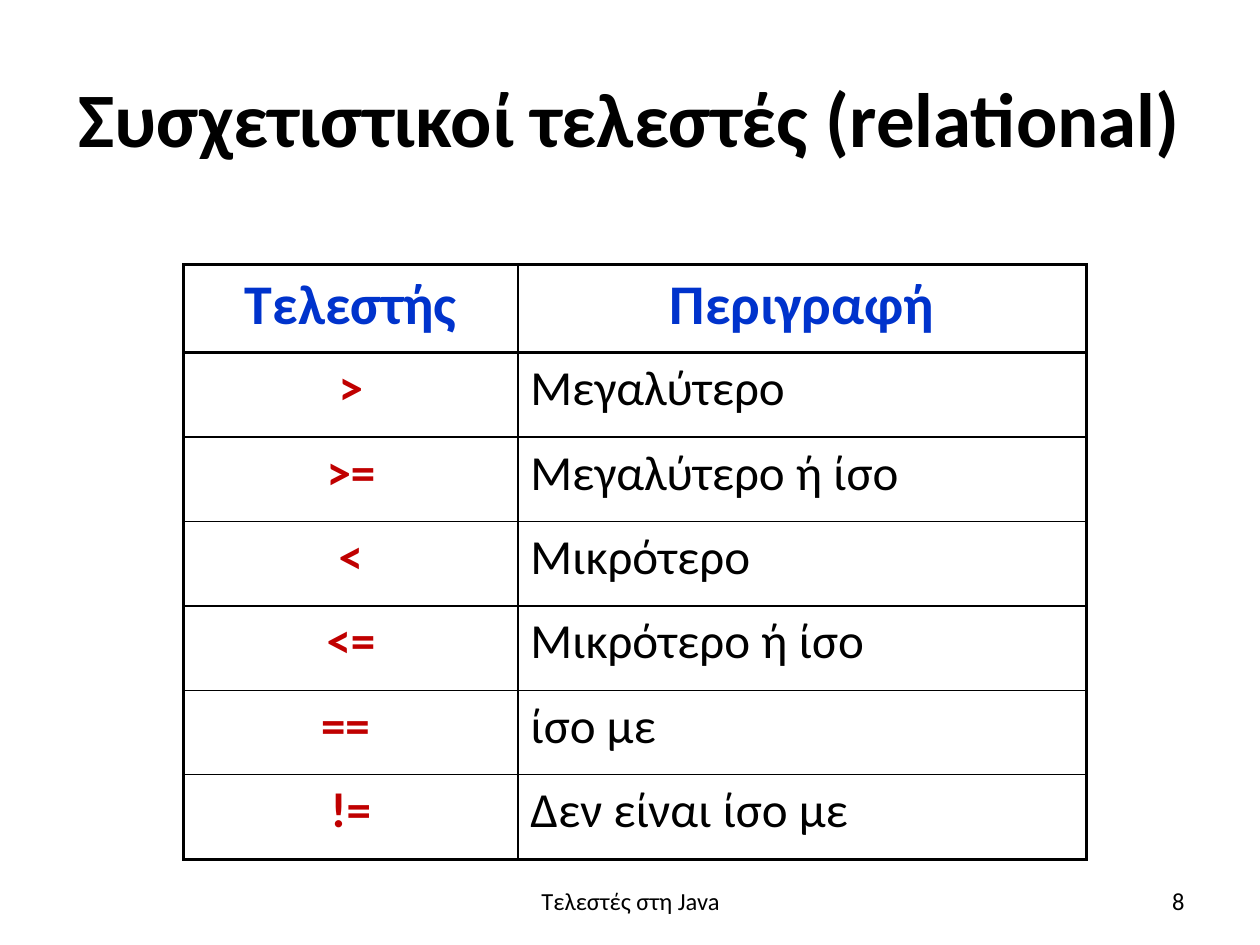
from lxml import etree
from pptx import Presentation
from pptx.dml.color import RGBColor
from pptx.enum.text import MSO_ANCHOR, MSO_AUTO_SIZE, PP_ALIGN
from pptx.oxml.ns import qn
from pptx.util import Inches, Pt

LEFT, CENTER, RIGHT = PP_ALIGN.LEFT, PP_ALIGN.CENTER, PP_ALIGN.RIGHT
MIDDLE = MSO_ANCHOR.MIDDLE
NO_AUTOFIT = MSO_AUTO_SIZE.NONE

FONT = "Calibri"
COLORS = {"text": "000000", "header": "0033CC", "operator": "C00000", "line": "000000"}

HEADERS = ("Τελεστής", "Περιγραφή")
OPERATORS = (
    (">", "Μεγαλύτερο"),
    (">=", "Μεγαλύτερο ή ίσο"),
    ("<", "Μικρότερο"),
    ("<=", "Μικρότερο ή ίσο"),
    ("== ", "ίσο με"),
    ("!=", "Δεν είναι ίσο με"),
)
COLUMN_WIDTHS = (2.65, 4.51)
HEADER_HEIGHT, ROW_HEIGHT = 0.7, 0.67
OUTER_LINE, INNER_LINE = 2, 1


def set_text(text_frame, text, size, color="text", bold=False, alignment=LEFT):
    text_frame.text = text
    paragraph = text_frame.paragraphs[0]
    paragraph.alignment = alignment
    font = paragraph.runs[0].font
    font.name, font.size, font.bold = FONT, Pt(size), bold
    font.color.rgb = RGBColor.from_string(COLORS[color])


def add_title(slide, text):
    title = slide.shapes.title
    title.left, title.top = Inches(0.5), Inches(0.3)
    title.width, title.height = Inches(9), Inches(1.25)
    text_frame = title.text_frame
    set_text(text_frame, text, 44, bold=True, alignment=CENTER)
    text_frame.auto_size = NO_AUTOFIT
    text_frame.vertical_anchor = MIDDLE
    text_frame.margin_left = text_frame.margin_right = Inches(0.05)


def add_footer(slide, text, left, width, alignment):
    box = slide.shapes.add_textbox(Inches(left), Inches(6.95), Inches(width), Inches(0.4))
    box.text_frame.word_wrap = True
    box.text_frame.vertical_anchor = MIDDLE
    set_text(box.text_frame, text, 14, alignment=alignment)


def set_borders(cell, widths):
    """Put left, right, top and bottom lines ahead of the cell's fill."""
    properties = cell._tc.get_or_add_tcPr()
    for index, (side, width) in enumerate(zip("LRTB", widths)):
        line = etree.Element(qn(f"a:ln{side}"), w=str(Pt(width)))
        fill = etree.SubElement(line, qn("a:solidFill"))
        etree.SubElement(fill, qn("a:srgbClr"), val=COLORS["line"])
        properties.insert(index, line)


def add_operator_table(slide):
    rows = (HEADERS, *OPERATORS)
    heights = [HEADER_HEIGHT] + [ROW_HEIGHT] * len(OPERATORS)
    frame = slide.shapes.add_table(
        len(rows), len(HEADERS), Inches(1.46), Inches(2.1),
        Inches(sum(COLUMN_WIDTHS)), Inches(sum(heights)))
    table = frame.table
    table.first_row = table.horz_banding = False
    for column, width in zip(table.columns, COLUMN_WIDTHS):
        column.width = Inches(width)

    last_row, last_column = len(rows) - 1, len(HEADERS) - 1
    for r, row in enumerate(rows):
        table.rows[r].height = Inches(heights[r])
        for c, text in enumerate(row):
            cell = table.cell(r, c)
            cell.fill.background()
            # Header, operator and description styles
            if r == 0:
                set_text(cell.text_frame, text, 32, "header", True, CENTER)
            elif c == 0:
                set_text(cell.text_frame, text, 28, "operator", True, CENTER)
            else:
                set_text(cell.text_frame, text, 28)
            # Heavy lines round the table and under the header
            heavy = (c == 0, c == last_column, r <= 1, r in (0, last_row))
            set_borders(cell, [OUTER_LINE if edge else INNER_LINE for edge in heavy])


def main():
    presentation = Presentation()
    presentation.slide_width, presentation.slide_height = Inches(10), Inches(7.5)
    title_only = presentation.slide_layouts[5]
    slide = presentation.slides.add_slide(title_only)

    add_title(slide, "Συσχετιστικοί τελεστές (relational)")
    add_operator_table(slide)
    add_footer(slide, "Τελεστές στη Java", 3.42, 3.17, CENTER)
    add_footer(slide, "8", 7.17, 2.33, RIGHT)

    presentation.save("out.pptx")


if __name__ == "__main__":
    main()
